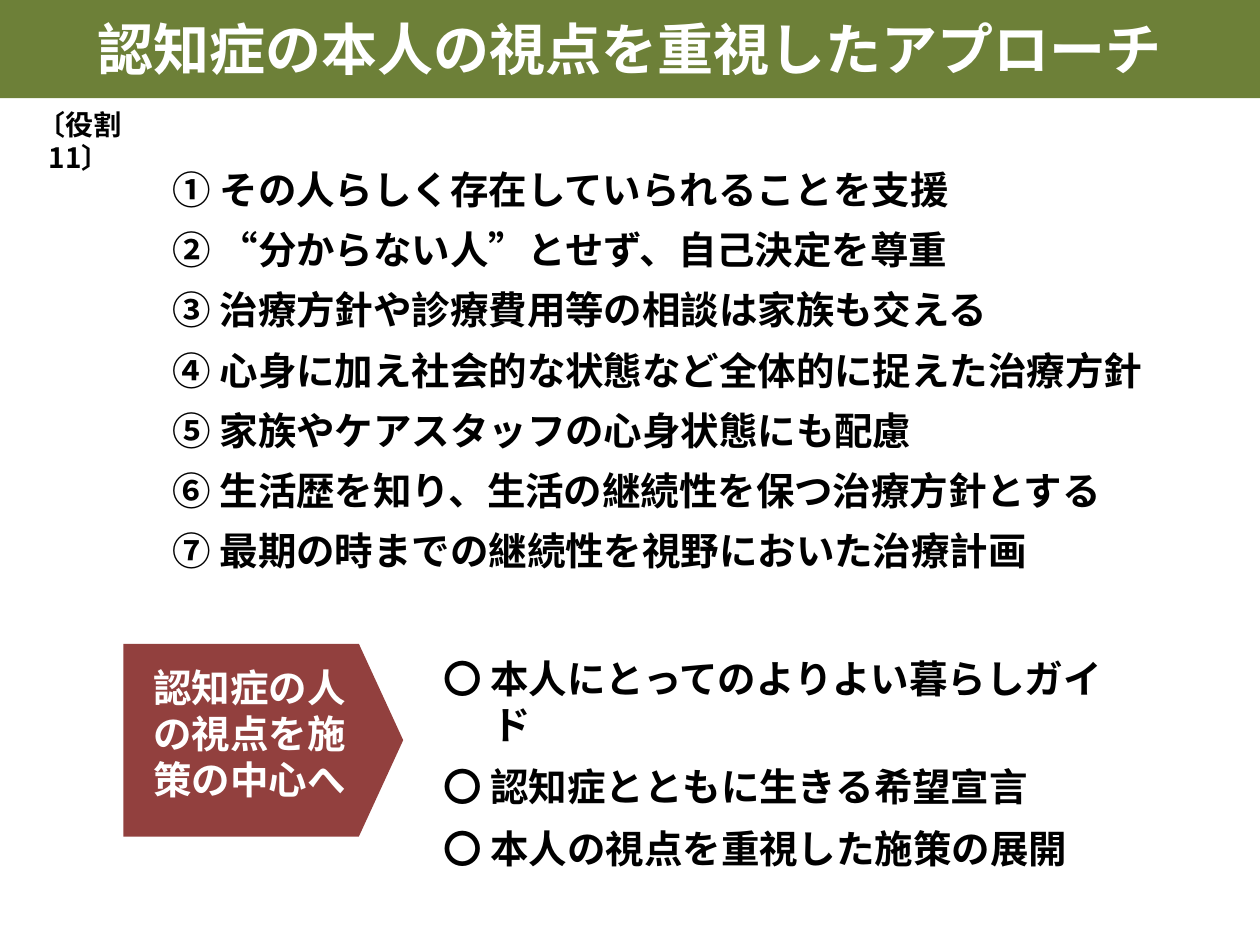
from dataclasses import dataclass

from lxml import etree
from pptx import Presentation
from pptx import util as u
from pptx.dml.color import RGBColor
from pptx.enum import shapes, text
from pptx.oxml import ns

WHITE = RGBColor(0xFF, 0xFF, 0xFF)
BLACK = RGBColor(0x00, 0x00, 0x00)
GREEN = RGBColor(0x6D, 0x80, 0x38)
RED = RGBColor(0x92, 0x40, 0x3E)
FONT = "Noto Sans CJK JP"
WIDTH, HEIGHT = 10, 7.5
HANG = 0.39


@dataclass(frozen=True)
class Box:
    """Left, top, width and height as shares of the slide."""
    x: float
    y: float
    w: float
    h: float

    def emu(self) -> tuple:
        return (u.Inches(self.x * WIDTH), u.Inches(self.y * HEIGHT),
                u.Inches(self.w * WIDTH), u.Inches(self.h * HEIGHT))


@dataclass(frozen=True)
class Block:
    box: Box
    lines: tuple[str, ...]
    size: int = 22
    color: RGBColor = BLACK
    align: text.PP_ALIGN = text.PP_ALIGN.LEFT
    anchor: text.MSO_ANCHOR = text.MSO_ANCHOR.TOP
    grow: bool = False
    hanging: bool = False
    space_before: int = 0


CENTER = text.PP_ALIGN.CENTER
BANNER = Box(0, 0, 1, 0.104)
PLATE = Box(0.098, 0.6813, 0.222, 0.204)

TITLE = Block(Box(0.024, 0.004, 0.952, 0.0933), ("認知症の本人の視点を重視したアプローチ",),
              size=32, color=WHITE, align=CENTER, anchor=text.MSO_ANCHOR.MIDDLE)
PRINCIPLES = Block(Box(0.127, 0.1693, 0.842, 0.4467), (
    "① その人らしく存在していられることを支援",
    "② “分からない人”とせず、自己決定を尊重",
    "③ 治療方針や診療費用等の相談は家族も交える",
    "④ 心身に加え社会的な状態など全体的に捉えた治療方針",
    "⑤ 家族やケアスタッフの心身状態にも配慮",
    "⑥ 生活歴を知り、生活の継続性を保つ治療方針とする",
    "⑦ 最期の時までの継続性を視野においた治療計画",
), hanging=True, space_before=8)
MEASURES = Block(Box(0.342, 0.6867, 0.571, 0.204), (
    "〇 本人にとってのよりよい暮らしガイド",
    "〇 認知症とともに生きる希望宣言",
    "〇 本人の視点を重視した施策の展開",
), hanging=True, space_before=9)
PLATE_LABEL = Block(Box(0.112, 0.696, 0.195, 0.1747),
                    ("認知症の人", "の視点を施", "策の中心へ"), color=WHITE)
ROLE = Block(Box(0, 0.1067, 0.126, 0.0493), ("〔役割 11〕",),
             size=16, align=CENTER, grow=True)


def add_filled(s, kind: shapes.MSO_SHAPE, box: Box, color: RGBColor):
    sp = s.shapes.add_shape(kind, *box.emu())
    sp.shadow.inherit = False
    sp.fill.solid()
    sp.fill.fore_color.rgb = color
    sp.line.fill.background()
    return sp


def add_run(p, content: str, size: int, color: RGBColor) -> None:
    r = p.add_run()
    r.text = content
    r.font.name = FONT
    r.font.size = u.Pt(size)
    r.font.bold = True
    r.font.color.rgb = color
    ea = etree.SubElement(r.font._element, ns.qn("a:ea"))
    ea.set("typeface", FONT)


def add_block(s, block: Block) -> None:
    tf = s.shapes.add_textbox(*block.box.emu()).text_frame
    tf.word_wrap = True
    tf.vertical_anchor = block.anchor
    if block.grow:
        tf.auto_size = text.MSO_AUTO_SIZE.SHAPE_TO_FIT_TEXT
    for i, line in enumerate(block.lines):
        p = tf.add_paragraph() if i else tf.paragraphs[0]
        p.alignment = block.align
        p.space_before = u.Pt(block.space_before)
        if block.hanging:
            pPr = p._p.get_or_add_pPr()
            pPr.set("marL", str(u.Inches(HANG)))
            pPr.set("indent", str(-u.Inches(HANG)))
        add_run(p, line, block.size, block.color)


def main() -> None:
    prs = Presentation()
    prs.slide_width, prs.slide_height = u.Inches(WIDTH), u.Inches(HEIGHT)
    s = prs.slides.add_slide(prs.slide_layouts[6])
    add_filled(s, shapes.MSO_SHAPE.RECTANGLE, BANNER, GREEN)
    for block in (TITLE, PRINCIPLES, MEASURES):
        add_block(s, block)
    plate = add_filled(s, shapes.MSO_SHAPE.PENTAGON, PLATE, RED)
    plate.adjustments[0] = 0.23
    add_block(s, PLATE_LABEL)
    add_block(s, ROLE)
    prs.save("out.pptx")


if __name__ == "__main__":
    main()
